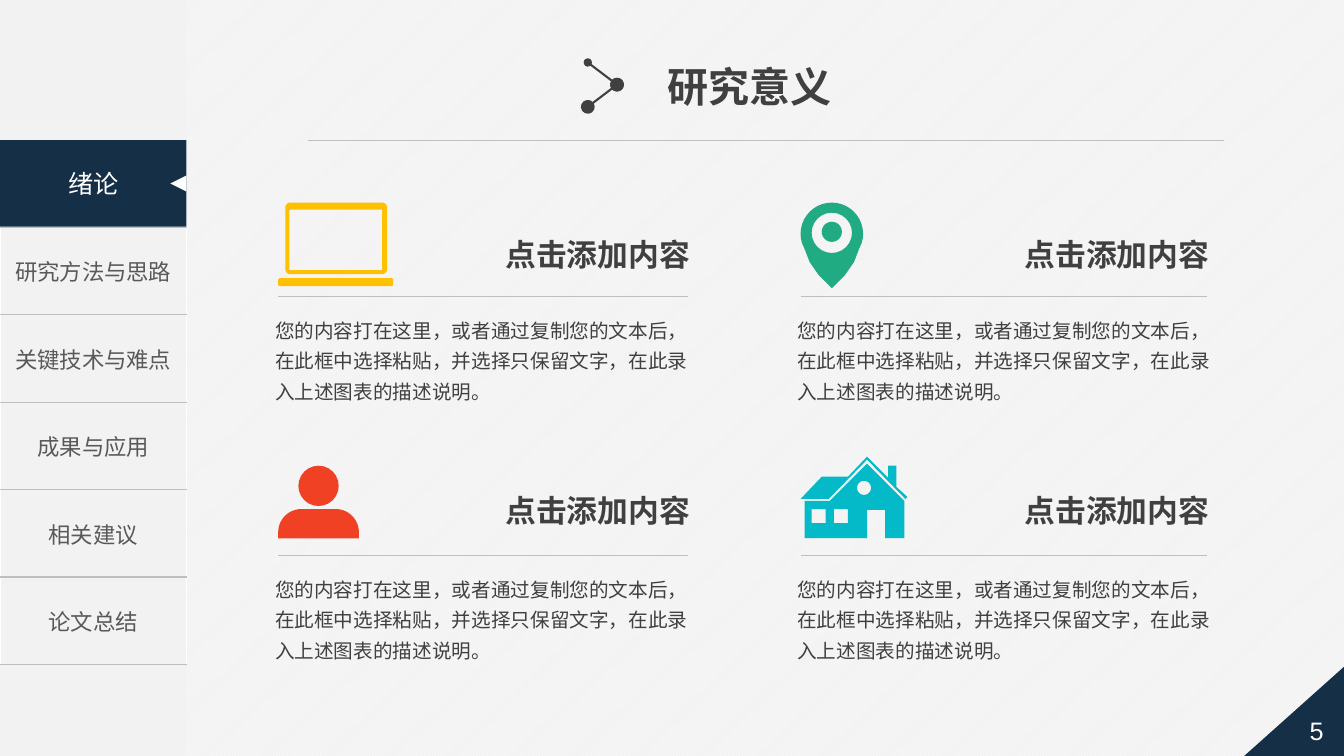
from math import cos, radians, sin

from lxml.etree import SubElement
from pptx import Presentation
from pptx.dml.color import RGBColor
from pptx.enum.dml import MSO_PATTERN
from pptx.enum.shapes import MSO_CONNECTOR, MSO_SHAPE
from pptx.enum.text import MSO_ANCHOR, MSO_AUTO_SIZE, PP_ALIGN
from pptx.oxml.ns import qn
from pptx.util import Inches, Pt

COLORS = {
    "white": "FFFFFF", "paper": "F2F2F2", "navy": "152F47", "rule": "BFBFBF",
    "text": "404040", "muted": "595959", "yellow": "FFC000", "green": "21AB82",
    "red": "F14124", "cyan": "05BAC8",
}
CJK_FONT = "Noto Sans CJK SC"
SECTIONS = ["绪论", "研究方法与思路", "关键技术与难点", "成果与应用", "相关建议", "论文总结"]
CARD_TITLE = "点击添加内容"
CARD_BODY = ("您的内容打在这里，或者通过复制您的文本后，在此框中选择粘贴，"
             "并选择只保留文字，在此录入上述图表的描述说明。")


def color(name):
    return RGBColor.from_string(COLORS[name])


def write(frame, text, size, ink="text", font=CJK_FONT, bold=False, align=PP_ALIGN.LEFT,
          anchor=MSO_ANCHOR.TOP, wrap=True, spacing=None):
    frame.word_wrap = wrap
    frame.auto_size = MSO_AUTO_SIZE.NONE
    frame.vertical_anchor = anchor
    para = frame.paragraphs[0]
    para.alignment = align
    para.line_spacing = spacing
    span = para.add_run()
    span.text = text
    span.font.size = Pt(size)
    span.font.name = font
    span.font.bold = bold
    span.font.color.rgb = color(ink)
    SubElement(span.font._element, qn("a:ea"), typeface=CJK_FONT)


def add_label(page, box, text, size, **style):
    label = page.shapes.add_textbox(*map(Inches, box))
    write(label.text_frame, text, size, **style)


def add_block(page, kind, box, fill=None, flip=False):
    block = page.shapes.add_shape(kind, *map(Inches, box))
    block.shadow.inherit = False
    block.line.fill.background()
    if fill:
        block.fill.solid()
        block.fill.fore_color.rgb = color(fill)
    else:
        block.fill.background()
    if flip:
        block._element.spPr.xfrm.set("flipH", "1")
    return block


def add_line(page, start, end, ink="rule", width=0.5, ends=None):
    line = page.shapes.add_connector(MSO_CONNECTOR.STRAIGHT, *map(Inches, (*start, *end)))
    line.line.color.rgb = color(ink)
    line.line.width = Pt(width)
    for tag, size in zip(("a:headEnd", "a:tailEnd"), ends or ()):
        SubElement(line.line._ln, qn(tag), type="oval", w=size, len=size)
    SubElement(line._element.spPr, qn("a:effectLst"))


# Icon outlines, in inches from the icon's top left corner
def arc(x, y, radius, start=0, end=360):
    steps = 24
    angles = [radians(start + (end - start) * step / steps) for step in range(steps + 1)]
    return [(x + radius * cos(angle), y + radius * sin(angle)) for angle in angles]


def rectangle(x, y, width, height):
    return [(x, y), (x + width, y), (x + width, y + height), (x, y + height)]


def rounded(x, y, width, height, radius):
    corners = rectangle(x + radius, y + radius, width - 2 * radius, height - 2 * radius)
    return [point for turn, corner in enumerate(corners)
            for point in arc(*corner, radius, 180 + 90 * turn, 270 + 90 * turn)]


LAPTOP = [rounded(0, 0.75, 1.14, 0.08, 0.02), rounded(0.07, 0, 1.01, 0.71, 0.05),
          rectangle(0.11, 0.07, 0.92, 0.6)]
PIN = [arc(0.31, 0.31, 0.31, 163, 377)
       + [(0.58, 0.46), (0.53, 0.59), (0.44, 0.72), (0.31, 0.85),
          (0.18, 0.72), (0.09, 0.59), (0.04, 0.46)],
       arc(0.31, 0.3, 0.2), arc(0.31, 0.29, 0.1)]
PERSON = [arc(0.23, 0.66, 0.23, 180, 270) + arc(0.57, 0.66, 0.23, 270, 360)
          + [(0.8, 0.72), (0, 0.72)],
          arc(0.4, 0.2, 0.2)]
HOUSE = [[(1.03, 0.44), (0.66, 0.07), (0.29, 0.44), (0.04, 0.44), (0.04, 0.81),
          (0.66, 0.81), (0.66, 0.53), (0.84, 0.53), (0.84, 0.81), (1.03, 0.81)],
         rectangle(0.11, 0.52, 0.14, 0.14), rectangle(0.33, 0.52, 0.14, 0.14),
         arc(0.63, 0.31, 0.07),
         [(1.06, 0.4), (1.04, 0.42), (0.66, 0.03), (0.28, 0.42), (0, 0.42), (0.21, 0.2),
          (0.47, 0.2), (0.66, 0), (0.87, 0.21), (0.87, 0.09), (0.95, 0.09), (0.95, 0.3)]]


def add_icon(page, left, top, contours, fill):
    placed = [[(Inches(left + x), Inches(top + y)) for x, y in contour]
              for contour in contours]
    builder = page.shapes.build_freeform(*placed[0][0])
    for index, contour in enumerate(placed):
        if index:
            builder.move_to(*contour[0])
        builder.add_line_segments(contour[1:], close=True)
    icon = builder.convert_to_shape()
    icon.shadow.inherit = False
    icon.line.fill.background()
    icon.fill.solid()
    icon.fill.fore_color.rgb = color(fill)


# Sidebar with the section list and the active tab
def add_border(cell, side):
    border = SubElement(cell._tc.get_or_add_tcPr(), qn(side), w=str(Pt(1)))
    fill = SubElement(border, qn("a:solidFill"))
    SubElement(fill, qn("a:srgbClr"), val=COLORS["rule"])


def draw_sidebar(page, left, width, top, row_height):
    add_block(page, MSO_SHAPE.RECTANGLE, (left, 0, width, 7.5), "paper")
    box = (left, top, width, row_height * len(SECTIONS))
    table = page.shapes.add_table(len(SECTIONS), 1, *map(Inches, box)).table
    table.first_row = table.horz_banding = False
    for index, section in enumerate(SECTIONS):
        cell = table.cell(index, 0)
        cell.margin_left = cell.margin_right = Inches(0.05)
        cell.vertical_anchor = MSO_ANCHOR.MIDDLE
        for side in ("a:lnT", "a:lnB"):
            add_border(cell, side)
        cell.fill.background()
        if index:
            write_cell = cell.text_frame
            write(write_cell, section, 16, ink="muted", align=PP_ALIGN.CENTER,
                  anchor=MSO_ANCHOR.MIDDLE)

    tab = add_block(page, MSO_SHAPE.RECTANGLE, (left, top, width, 0.86), "navy")
    write(tab.text_frame, SECTIONS[0], 18, ink="white", align=PP_ALIGN.CENTER,
          anchor=MSO_ANCHOR.MIDDLE)
    marker = add_block(page, MSO_SHAPE.ISOSCELES_TRIANGLE,
                       (left + width - 0.16, top + 0.35, 0.16, 0.16), "white")
    marker.rotation = 270


# Heading: node mark, title and rule
def draw_heading(page, left, top, width):
    title = page.shapes.title
    title.left, title.top, title.width, title.height = map(
        Inches, (left + 3.47, top, 1.85, 0.59))
    write(title.text_frame, "研究意义", 29.3, font="Arial", bold=True,
          anchor=MSO_ANCHOR.MIDDLE, wrap=False)
    hub = (left + 3.07, top + 0.28)
    add_line(page, (left + 2.78, top + 0.06), hub, "text", 1.5, ("med", "lg"))
    add_line(page, hub, (left + 2.78, top + 0.5), "text", 1.5, ("lg", "lg"))
    add_line(page, (left, top + 0.83), (left + width, top + 0.83))


# Content card: the rule separates icon and title from the description
def draw_card(page, left, rule_top, width, icon, icon_top, fill, title_top):
    add_icon(page, left, icon_top, icon, fill)
    add_line(page, (left, rule_top), (left + width, rule_top))
    add_label(page, (left + width - 1.93, title_top, 2.05, 0.47), CARD_TITLE, 22, bold=True,
              align=PP_ALIGN.RIGHT, anchor=MSO_ANCHOR.MIDDLE, wrap=False)
    add_label(page, (left - 0.13, rule_top + 0.1, 4.44, 1.02), CARD_BODY, 14, spacing=1.3)


# Page number in the corner
def draw_page_number(page, left, top):
    add_block(page, MSO_SHAPE.RIGHT_TRIANGLE, (left, top, 1.04, 0.93), "navy", flip=True)
    plate = add_block(page, MSO_SHAPE.PENTAGON, (left + 0.12, top + 0.39, 1.08, 0.55),
                      flip=True)
    write(plate.text_frame, "5", 18, ink="white", font="Arial", align=PP_ALIGN.CENTER,
          anchor=MSO_ANCHOR.MIDDLE)


def main():
    deck = Presentation()
    deck.slide_width, deck.slide_height = Inches(13.33), Inches(7.5)
    page = deck.slides.add_slide(deck.slide_layouts[5])
    backdrop = page.background.fill
    backdrop.patterned()
    backdrop.pattern = MSO_PATTERN.LIGHT_UPWARD_DIAGONAL
    backdrop.fore_color.rgb = color("white")
    backdrop.back_color.rgb = color("paper")

    draw_sidebar(page, 0, 1.85, 1.39, 0.867)
    draw_heading(page, 3.05, 0.56, 9.09)
    draw_card(page, 2.76, 2.94, 4.06, LAPTOP, 2.01, "yellow", 2.29)
    draw_card(page, 7.94, 2.94, 4.03, PIN, 2.01, "green", 2.29)
    draw_card(page, 2.76, 5.51, 4.06, PERSON, 4.62, "red", 4.83)
    draw_card(page, 7.94, 5.51, 4.03, HOUSE, 4.53, "cyan", 4.83)
    draw_page_number(page, 12.33, 6.58)
    deck.save("out.pptx")


if __name__ == "__main__":
    main()
